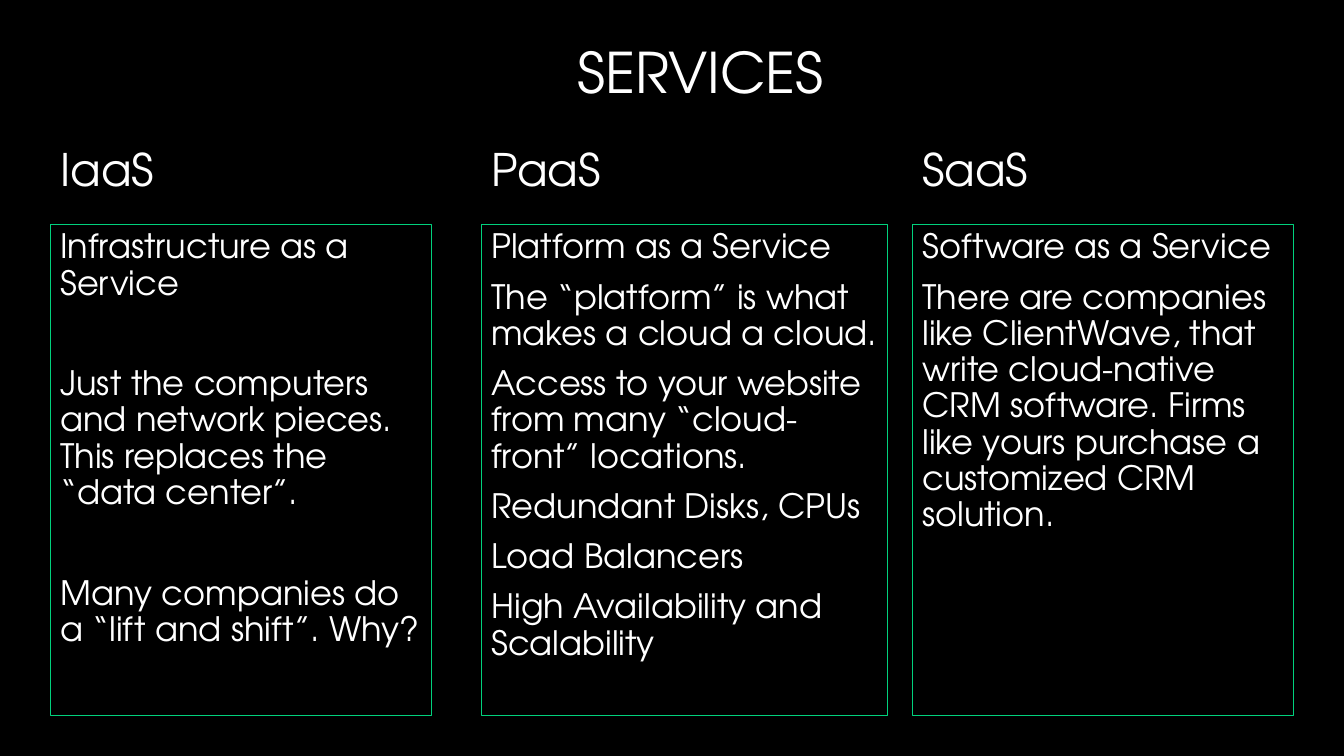
from pptx import Presentation
from pptx import util as u
from pptx.dml.color import RGBColor
from pptx.enum import shapes, text

FONT = "TeX Gyre Adventor"
WHITE, BLACK, GREEN = "FFFFFF", "000000", "01D17D"
TITLE = "SERVICES"
WIDE, HIGH = 13.33, 7.5
TIGHT, LOOSE = 10, 46  # points before a paragraph

# heading, box width, gap between paragraphs, paragraphs
SERVICES = [
    ("IaaS", 3.78, LOOSE, [
        "Infrastructure as a Service",
        "Just the computers and network pieces. This replaces the “data center”.",
        "Many companies do a “lift and shift”. Why?",
    ]),
    ("PaaS", 4.03, TIGHT, [
        "Platform as a Service",
        "The “platform” is what makes a cloud a cloud.",
        "Access to your website from many “cloud-front” locations.",
        "Redundant Disks, CPUs",
        "Load Balancers",
        "High Availability and Scalability",
    ]),
    ("SaaS", 3.78, TIGHT, [
        "Software as a Service",
        "There are companies like ClientWave, that write cloud-native CRM "
        "software. Firms like yours purchase a customized CRM solution.",
    ]),
]

EDGE, HEAD_W = 0.5, 3.78
STEP = (WIDE - 2 * EDGE - HEAD_W) / (len(SERVICES) - 1)
HEAD_TOP, HEAD_H = 1.31, 0.69
BOX_TOP, BOX_H = 2.23, 4.87


def color(code):
    return RGBColor.from_string(code)


def write(shape, lines, size, anchor, align=text.PP_ALIGN.LEFT, gap=0):
    frame = shape.text_frame
    setup = {"word_wrap": True, "auto_size": text.MSO_AUTO_SIZE.NONE,
             "vertical_anchor": anchor}
    for name, value in setup.items():
        setattr(frame, name, value)
    for i, line in enumerate(lines):
        para = frame.add_paragraph() if i else frame.paragraphs[0]
        para.text = line
        style = {"alignment": align, "line_spacing": 0.9,
                 "space_before": u.Pt(gap if i else 0)}
        for name, value in style.items():
            setattr(para, name, value)
        para.font.name, para.font.size = FONT, u.Pt(size)
        para.font.color.rgb = color(WHITE)


def main():
    deck = Presentation()
    deck.slide_width, deck.slide_height = u.Inches(WIDE), u.Inches(HIGH)
    slide = deck.slides.add_slide(deck.slide_layouts[5])
    slide.background.fill.solid()
    slide.background.fill.fore_color.rgb = color(BLACK)

    title = slide.shapes.title
    place = {"left": 4.12, "top": 0.03, "width": 4.15, "height": 1.43}
    for name, value in place.items():
        setattr(title, name, u.Inches(value))
    write(title, [TITLE], 40, text.MSO_ANCHOR.MIDDLE, text.PP_ALIGN.RIGHT)

    for col, (name, width, gap, lines) in enumerate(SERVICES):
        left = EDGE + col * STEP
        head = slide.shapes.add_textbox(
            *map(u.Inches, (left, HEAD_TOP, HEAD_W, HEAD_H)))
        write(head, [name], 32, text.MSO_ANCHOR.BOTTOM)
        box = slide.shapes.add_shape(
            shapes.MSO_SHAPE.RECTANGLE,
            *map(u.Inches, (left, BOX_TOP, width, BOX_H)))
        box.shadow.inherit = False
        box.fill.background()
        box.line.color.rgb = color(GREEN)
        box.line.width = u.Pt(0.75)
        write(box, lines, 24, text.MSO_ANCHOR.TOP, gap=gap)

    deck.save("out.pptx")


if __name__ == "__main__":
    main()
